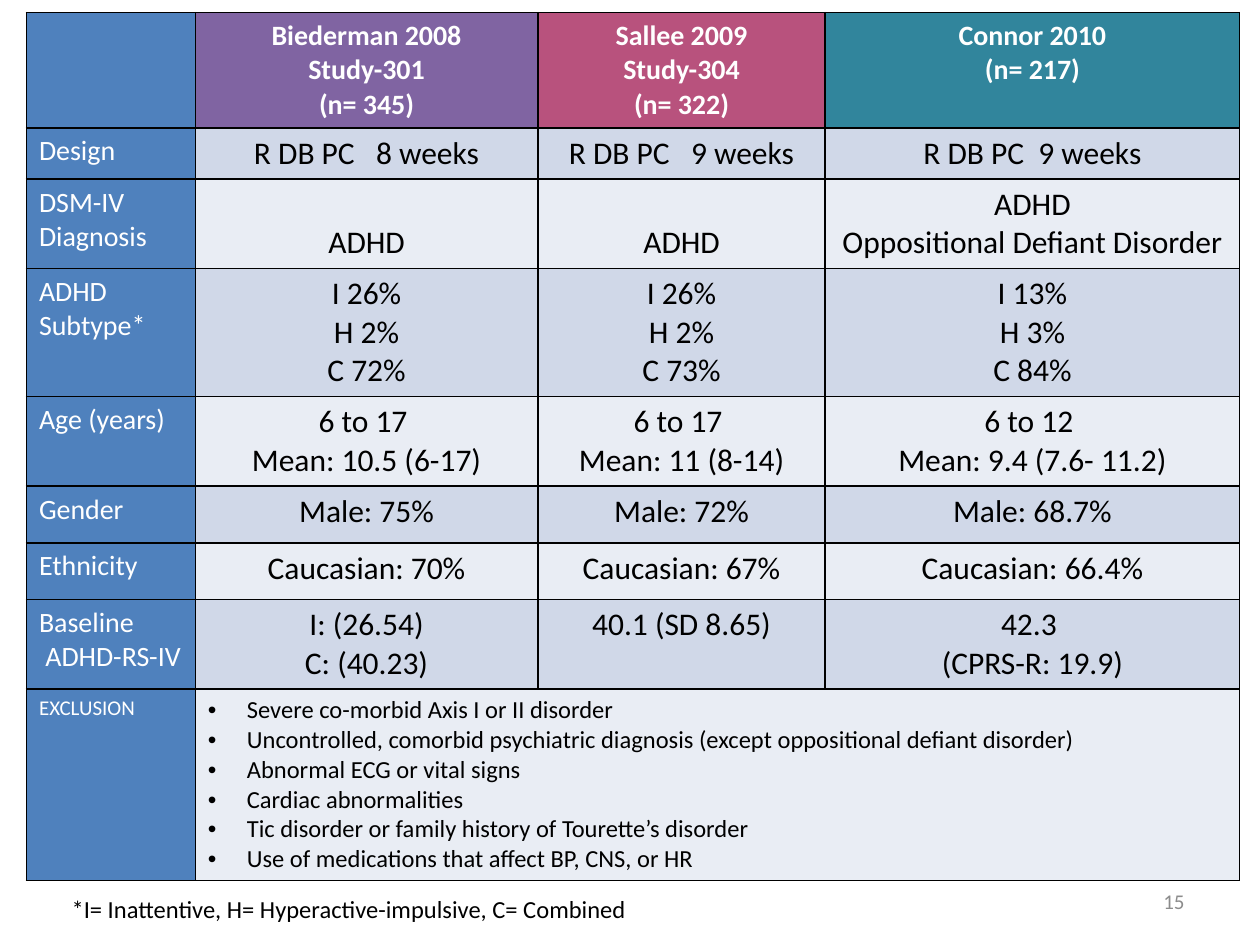
from lxml import etree
from pptx import Presentation
from pptx.dml.color import RGBColor
from pptx.enum.text import MSO_ANCHOR, PP_ALIGN
from pptx.oxml.ns import qn
from pptx.util import Inches, Pt

LEFT, CENTER, RIGHT = PP_ALIGN.LEFT, PP_ALIGN.CENTER, PP_ALIGN.RIGHT
TOP, MIDDLE, BOTTOM = MSO_ANCHOR.TOP, MSO_ANCHOR.MIDDLE, MSO_ANCHOR.BOTTOM

THEME = {
    "font": "Calibri",
    "text": "000000",
    "light": "FFFFFF",
    "muted": "8C8C8C",
    "label": "4F81BD",
    "headers": ["4F81BD", "8064A2", "B8527D", "31859C"],
    "bands": ["D0D8E8", "E9EDF4"],
    "label_size": 16,
    "body_size": 18,
    "note_size": 14,
    "small_size": 12,
}

COLUMN_WIDTHS = [1.34, 2.72, 2.28, 3.29]
ROW_HEIGHTS = [0.9, 0.4, 0.71, 1.01, 0.71, 0.45, 0.45, 0.71, 1.51]
ROWS = [
    ["", "Biederman 2008\nStudy-301\n(n= 345)", "Sallee 2009\nStudy-304\n(n= 322)",
     "Connor 2010\n(n= 217)"],
    ["Design", "R DB PC   8 weeks", "R DB PC   9 weeks", "R DB PC  9 weeks"],
    ["DSM-IV Diagnosis", "ADHD", "ADHD", "ADHD\nOppositional Defiant Disorder"],
    ["ADHD Subtype*", "I 26%\nH 2%\nC 72%", "I 26%\nH 2%\nC 73%", "I 13%\nH 3%\nC 84%"],
    ["Age (years)", "6 to 17 \nMean: 10.5 (6-17)", "6 to 17 \nMean: 11 (8-14)",
     "6 to 12 \nMean: 9.4 (7.6- 11.2)"],
    ["Gender", "Male: 75%", "Male: 72%", "Male: 68.7%"],
    ["Ethnicity", "Caucasian: 70%", "Caucasian: 67%", "Caucasian: 66.4%"],
    ["Baseline\n ADHD-RS-IV", "I: (26.54)\nC: (40.23)", "40.1 (SD 8.65)",
     "42.3 \n(CPRS-R: 19.9)"],
    ["EXCLUSION",
     "Severe co-morbid Axis I or II disorder\n"
     "Uncontrolled, comorbid psychiatric diagnosis (except oppositional defiant disorder)\n"
     "Abnormal ECG or vital signs\n"
     "Cardiac abnormalities\n"
     "Tic disorder or family history of Tourette’s disorder\n"
     "Use of medications that affect BP, CNS, or HR", "", ""],
]
DIAGNOSIS_ROW = 2
EXCLUSION_ROW = len(ROWS) - 1


def write_text(frame, text, size, color, alignment=LEFT, bold=False):
    frame.text = text
    font_format = {"name": THEME["font"], "size": Pt(size), "bold": bold}
    for paragraph in frame.paragraphs:
        paragraph.alignment = alignment
        for font in [paragraph.font] + [run.font for run in paragraph.runs]:
            for attribute, value in font_format.items():
                setattr(font, attribute, value)
            font.color.rgb = RGBColor.from_string(color)


def add_borders(cell):
    properties = cell._tc.get_or_add_tcPr()
    for side in ("a:lnL", "a:lnR", "a:lnT", "a:lnB"):
        line = etree.SubElement(properties, qn(side), w=str(Pt(1)))
        fill = etree.SubElement(line, qn("a:solidFill"))
        etree.SubElement(fill, qn("a:srgbClr"), val=THEME["text"])


presentation = Presentation()
presentation.slide_width = Inches(10)
presentation.slide_height = Inches(7.5)
slide = presentation.slides.add_slide(presentation.slide_layouts[6])

table = slide.shapes.add_table(
    len(ROWS), len(COLUMN_WIDTHS), Inches(0.21), Inches(0.1),
    Inches(sum(COLUMN_WIDTHS)), Inches(sum(ROW_HEIGHTS))).table
for column, width in zip(table.columns, COLUMN_WIDTHS):
    column.width = Inches(width)
for row, height in zip(table.rows, ROW_HEIGHTS):
    row.height = Inches(height)

for row_index, texts in enumerate(ROWS):
    for column_index, text in enumerate(texts):
        cell = table.cell(row_index, column_index)
        size, color, alignment = THEME["label_size"], THEME["light"], LEFT
        if row_index == 0:
            fill_color, alignment = THEME["headers"][column_index], CENTER
        elif column_index == 0:
            fill_color = THEME["label"]
            if row_index == EXCLUSION_ROW:
                size = THEME["small_size"]
        else:
            fill_color = THEME["bands"][(row_index - 1) % 2]
            size, color, alignment = THEME["body_size"], THEME["text"], CENTER
            if row_index == EXCLUSION_ROW:
                size, alignment = THEME["note_size"], LEFT
        write_text(cell.text_frame, text, size, color, alignment, row_index == 0)
        is_diagnosis = row_index == DIAGNOSIS_ROW and column_index > 0
        cell.vertical_anchor = BOTTOM if is_diagnosis else TOP
        add_borders(cell)
        cell.fill.solid()
        cell.fill.fore_color.rgb = RGBColor.from_string(fill_color)

exclusion_cell = table.cell(EXCLUSION_ROW, 1)
exclusion_cell.merge(table.cell(EXCLUSION_ROW, 3))
for paragraph in exclusion_cell.text_frame.paragraphs:
    properties = paragraph._p.get_or_add_pPr()
    properties.set("marL", str(Inches(0.31)))
    properties.set("indent", str(-Inches(0.31)))
    bullet_font = etree.Element(qn("a:buFont"), typeface="Arial")
    bullet = etree.Element(qn("a:buChar"), char="•")
    properties.insert(0, bullet_font)
    properties.insert(1, bullet)

for text, box, size, color, alignment, anchor in [
    ("15", (7.17, 6.95, 2.33, 0.4), THEME["small_size"], THEME["muted"], RIGHT, MIDDLE),
    ("*I= Inattentive, H= Hyperactive-impulsive, C= Combined", (0.47, 7.05, 5, 0.34),
     THEME["note_size"], THEME["text"], LEFT, TOP),
]:
    frame = slide.shapes.add_textbox(*map(Inches, box)).text_frame
    frame.word_wrap = True
    frame.vertical_anchor = anchor
    write_text(frame, text, size, color, alignment)

presentation.save("out.pptx")
